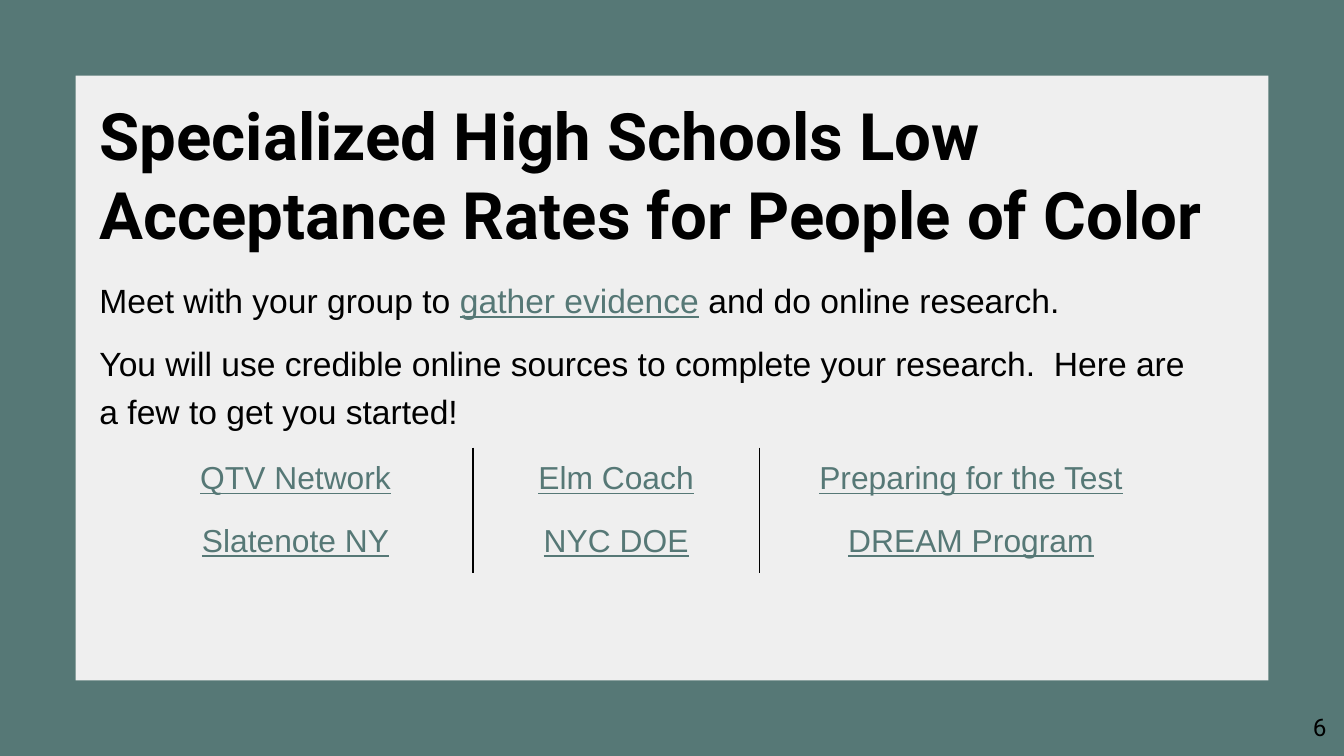
from lxml import etree
from pptx import Presentation
from pptx.dml.color import RGBColor
from pptx.enum.shapes import MSO_SHAPE
from pptx.enum.text import MSO_ANCHOR, MSO_AUTO_SIZE, PP_ALIGN
from pptx.oxml.ns import qn
from pptx.util import Inches, Pt

TEAL = RGBColor(0x56, 0x78, 0x76)
PANEL_GRAY = RGBColor(0xEF, 0xEF, 0xEF)
BLACK = RGBColor(0, 0, 0)
LEFT, CENTER, RIGHT = PP_ALIGN.LEFT, PP_ALIGN.CENTER, PP_ALIGN.RIGHT
TOP, MIDDLE = MSO_ANCHOR.TOP, MSO_ANCHOR.MIDDLE
NO_AUTOFIT = MSO_AUTO_SIZE.NONE
RECTANGLE = MSO_SHAPE.RECTANGLE

SLIDE_WIDTH = 10
SLIDE_HEIGHT = SLIDE_WIDTH * 9 / 16
PANEL_MARGIN = SLIDE_HEIGHT / 10

TITLE = ["Specialized High Schools Low", "Acceptance Rates for People of Color"]
INSTRUCTIONS = [
    [("Meet with your group to ", False), ("gather evidence", True),
     (" and do online research.", False)],
    [("You will use credible online sources to complete your research.  "
      "Here are a few to get you started!", False)],
]
SOURCES = [
    ["QTV Network", "Elm Coach", "Preparing for the Test"],
    ["Slatenote NY", "NYC DOE", "DREAM Program"],
]
COLUMN_WIDTHS = [2.64, 2.13, 3.15]


def place(shape, box):
    shape.left, shape.top, shape.width, shape.height = map(Inches, box)


def prepare_frame(frame, anchor):
    frame.word_wrap = True
    frame.auto_size = NO_AUTOFIT
    frame.vertical_anchor = anchor
    frame.margin_left = frame.margin_right = 0
    frame.margin_top = frame.margin_bottom = 0


def set_font(font, name, size, color, bold=False):
    font.name, font.size, font.bold = name, Pt(size), bold
    font.color.rgb = color


def next_paragraph(frame, index):
    return frame.add_paragraph() if index else frame.paragraphs[0]


def add_panel(slide, box):
    """Add the light panel behind everything else."""
    panel = slide.shapes.add_shape(RECTANGLE, *map(Inches, box))
    panel.shadow.inherit = False
    panel.fill.solid()
    panel.fill.fore_color.rgb = PANEL_GRAY
    panel.line.fill.background()
    slide.shapes._spTree.insert(2, panel._element)


def fill_title(title, box):
    place(title, box)
    prepare_frame(title.text_frame, TOP)
    for index, line in enumerate(TITLE):
        paragraph = next_paragraph(title.text_frame, index)
        paragraph.text = line
        paragraph.alignment = LEFT
        set_font(paragraph.font, "Roboto", 35, BLACK, bold=True)


def fill_instructions(body, box):
    place(body, box)
    prepare_frame(body.text_frame, TOP)
    for index, parts in enumerate(INSTRUCTIONS):
        paragraph = next_paragraph(body.text_frame, index)
        paragraph.line_spacing = 1.2
        paragraph.space_before = paragraph.space_after = Pt(8 * index)
        properties = paragraph._p.get_or_add_pPr()
        properties.set("marL", "0")
        properties.set("indent", "0")
        etree.SubElement(properties, qn("a:buNone"))
        set_font(paragraph.font, "Arial", 18, BLACK)
        for text, is_link in parts:
            run = paragraph.add_run()
            run.text = text
            if is_link:
                run.font.underline = True
                run.font.color.rgb = TEAL


def set_borders(cell, visible_sides):
    properties = cell._tc.get_or_add_tcPr()
    for side in "LRTB":
        line = etree.SubElement(properties, qn(f"a:ln{side}"), w=str(Pt(0.75)))
        if side in visible_sides:
            fill = etree.SubElement(line, qn("a:solidFill"))
            etree.SubElement(fill, qn("a:srgbClr"), val=str(BLACK))
        else:
            etree.SubElement(line, qn("a:noFill"))


def add_sources(slide, box):
    """Add the table of sources, ruled only between its columns."""
    table = slide.shapes.add_table(
        len(SOURCES), len(COLUMN_WIDTHS), *map(Inches, box)).table
    table.first_row = table.horz_banding = False
    for column, width in zip(table.columns, COLUMN_WIDTHS):
        column.width = Inches(width)
    last = len(COLUMN_WIDTHS) - 1
    for row, names in enumerate(SOURCES):
        for col, name in enumerate(names):
            cell = table.cell(row, col)
            cell.margin_left = cell.margin_right = Inches(0.1)
            cell.margin_top = cell.margin_bottom = Inches(0.1)
            set_borders(cell, ("L" if col else "") + ("R" if col < last else ""))
            cell.fill.background()
            paragraph = cell.text_frame.paragraphs[0]
            paragraph.text = name
            paragraph.alignment = CENTER
            set_font(paragraph.font, "Arial", 17, TEAL)
            paragraph.font.underline = True


def add_page_number(slide, box, number):
    frame = slide.shapes.add_textbox(*map(Inches, box)).text_frame
    prepare_frame(frame, MIDDLE)
    paragraph = frame.paragraphs[0]
    paragraph.text = str(number)
    paragraph.alignment = RIGHT
    set_font(paragraph.font, "Roboto", 13, BLACK)


def build_research_slide(presentation):
    slide = presentation.slides.add_slide(presentation.slide_layouts[1])
    slide.background.fill.solid()
    slide.background.fill.fore_color.rgb = TEAL
    add_panel(slide, (PANEL_MARGIN, PANEL_MARGIN,
                      SLIDE_WIDTH - 2 * PANEL_MARGIN,
                      SLIDE_HEIGHT - 2 * PANEL_MARGIN))
    fill_title(slide.shapes.title, (0.74, 0.71, 8.39, 1.31))
    fill_instructions(slide.placeholders[1], (0.74, 2.02, 8.1, 1.22))
    add_sources(slide, (0.88, 3.33, sum(COLUMN_WIDTHS), 0.84))
    add_page_number(slide, (9.27, 5.19, 0.6, 0.43), 6)


def main():
    presentation = Presentation()
    presentation.slide_width = Inches(SLIDE_WIDTH)
    presentation.slide_height = Inches(SLIDE_HEIGHT)
    build_research_slide(presentation)
    presentation.save("out.pptx")


if __name__ == "__main__":
    main()
